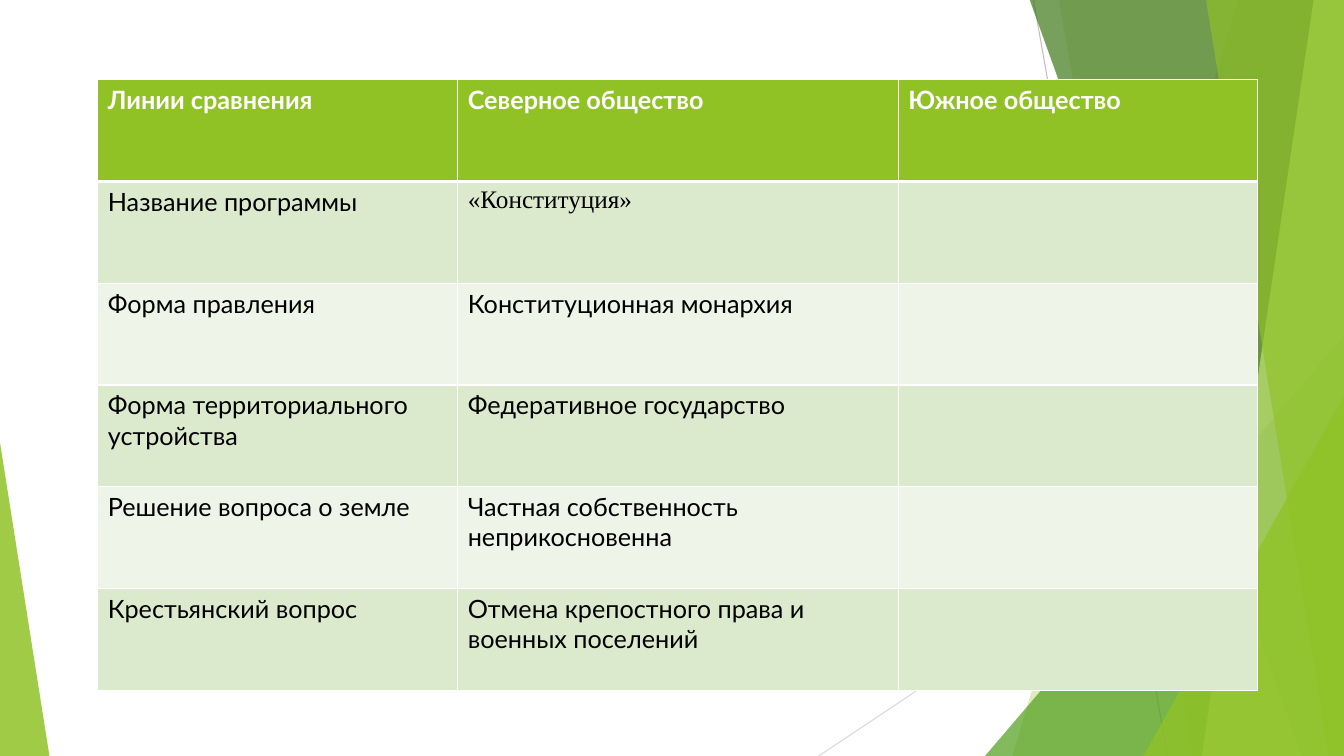
import pptx
import pptx.dml.color
import pptx.enum.shapes
import pptx.oxml
import pptx.oxml.ns
import pptx.util
from pptx.util import Inches

COLORS = {
    "lime": "90C226",
    "pale_lime": "C0E474",
    "green": "54A021",
    "dark_green": "3F7819",
    "band_dark": "DBE9CD",
    "band_light": "EEF4E8",
    "white": "FFFFFF",
    "black": "000000",
    "gray": "BFBFBF",
    "light_gray": "D9D9D9",
}
RIGHT, TOP, BOTTOM = 13.33, -0.01, 7.5
COLUMN_WIDTHS = (3.57, 4.37, 3.56)
ROW_HEIGHT = 1.01
ROWS = [
    ("Линии сравнения", "Северное общество", "Южное общество"),
    ("Название программы", "«Конституция»", ""),
    ("Форма правления", "Конституционная монархия", ""),
    ("Форма территориального устройства", "Федеративное государство", ""),
    ("Решение вопроса о земле", "Частная собственность неприкосновенна", ""),
    ("Крестьянский вопрос", "Отмена крепостного права и военных поселений", ""),
]
SERIF_TEXT = "«Конституция»"


def rgb(color):
    return pptx.dml.color.RGBColor.from_string(COLORS[color])


def make_element(xml):
    namespace = pptx.oxml.ns.nsdecls("a")
    return pptx.oxml.parse_xml(xml.replace("/>", f" {namespace}/>", 1)
                               if xml.endswith("/>") and xml.count("<") == 1
                               else xml.replace(">", f" {namespace}>", 1))


def style_facet(shape, color, opacity):
    """Give a shape a see-through fill without line or shadow."""
    shape.shadow.inherit = False
    shape.line.fill.background()
    shape.fill.solid()
    shape.fill.fore_color.rgb = rgb(color)
    color_element = shape.fill._xPr.find(".//" + pptx.oxml.ns.qn("a:srgbClr"))
    color_element.append(make_element(f'<a:alpha val="{opacity * 1000}"/>'))


def add_line(slide, start, end, color):
    line = slide.shapes.add_connector(
        pptx.enum.shapes.MSO_CONNECTOR.STRAIGHT,
        *(Inches(value) for value in start + end))
    line.line.color.rgb = rgb(color)
    line.line.width = pptx.util.Pt(0.75)
    line._element.spPr.append(make_element("<a:effectLst/>"))


def add_side_panel(slide, top_left, bottom_left, color, opacity):
    """Add a full-height panel from a slanted left side to the slide's right edge."""
    corners = [(top_left, TOP), (RIGHT, TOP), (RIGHT, BOTTOM), (bottom_left, BOTTOM)]
    points = [(Inches(x), Inches(y)) for x, y in corners]
    builder = slide.shapes.build_freeform(*points[0], scale=1.0)
    builder.add_line_segments(points[1:], close=True)
    style_facet(builder.convert_to_shape(), color, opacity)


def add_triangle(slide, left, top, width, apex, color, opacity):
    """Add a triangle that stands on the bottom edge of the slide."""
    shape = slide.shapes.add_shape(
        pptx.enum.shapes.MSO_SHAPE.ISOSCELES_TRIANGLE,
        Inches(left), Inches(top), Inches(width), Inches(BOTTOM - top))
    shape.adjustments[0] = apex
    style_facet(shape, color, opacity)


def set_borders(cell, top_width, bottom_width):
    properties = cell._tc.get_or_add_tcPr()
    widths = {"lnL": 1, "lnR": 1, "lnT": top_width, "lnB": bottom_width}
    for index, (side, width) in enumerate(widths.items()):
        properties.insert(index, make_element(
            f'<a:{side} w="{pptx.util.Pt(width)}"><a:solidFill>'
            f'<a:srgbClr val="{COLORS["white"]}"/></a:solidFill></a:{side}>'))


def fill_cell(cell, text, row_index):
    is_header = row_index == 0
    band = "band_dark" if row_index % 2 else "band_light"
    cell.fill.solid()
    cell.fill.fore_color.rgb = rgb("lime" if is_header else band)
    set_borders(cell, 3 if row_index == 1 else 1, 3 if is_header else 1)
    cell.text_frame.text = text
    for run in cell.text_frame.paragraphs[0].runs:
        run.font.name = "Times New Roman" if text == SERIF_TEXT else "Lato"
        run.font.size = pptx.util.Pt(18)
        run.font.bold = is_header
        run.font.color.rgb = rgb("white" if is_header else "black")


def add_comparison_table(slide):
    table = slide.shapes.add_table(
        len(ROWS), len(COLUMN_WIDTHS), Inches(0.97), Inches(0.79),
        Inches(sum(COLUMN_WIDTHS)), Inches(ROW_HEIGHT * len(ROWS))).table
    table.horz_banding = False
    for column, width in zip(table.columns, COLUMN_WIDTHS):
        column.width = Inches(width)
    for row_index, texts in enumerate(ROWS):
        table.rows[row_index].height = Inches(ROW_HEIGHT)
        for column_index, text in enumerate(texts):
            fill_cell(table.cell(row_index, column_index), text, row_index)


def add_facets(slide):
    add_line(slide, (10.25, 0), (11.58, BOTTOM), "gray")
    add_line(slide, (RIGHT, 4.03), (8.12, BOTTOM), "light_gray")
    add_side_panel(slide, 12.28, 10.04, "lime", 30)
    add_side_panel(slide, 10.5, 11.83, "lime", 20)
    add_triangle(slide, 9.77, 3.33, 3.56, 1, "green", 72)
    add_side_panel(slide, 10.21, 12.91, "dark_green", 70)
    add_side_panel(slide, 13.03, 11.92, "pale_lime", 70)
    add_side_panel(slide, 11.96, 13.18, "lime", 65)
    add_triangle(slide, 11.34, 3.93, 1.99, 1, "lime", 80)
    add_triangle(slide, 0, 4.39, 0.49, 0, "lime", 85)


def main():
    presentation = pptx.Presentation()
    presentation.slide_width = Inches(RIGHT)
    presentation.slide_height = Inches(BOTTOM)
    slide = presentation.slides.add_slide(presentation.slide_layouts[6])
    add_facets(slide)
    add_comparison_table(slide)
    presentation.save("out.pptx")


if __name__ == "__main__":
    main()
